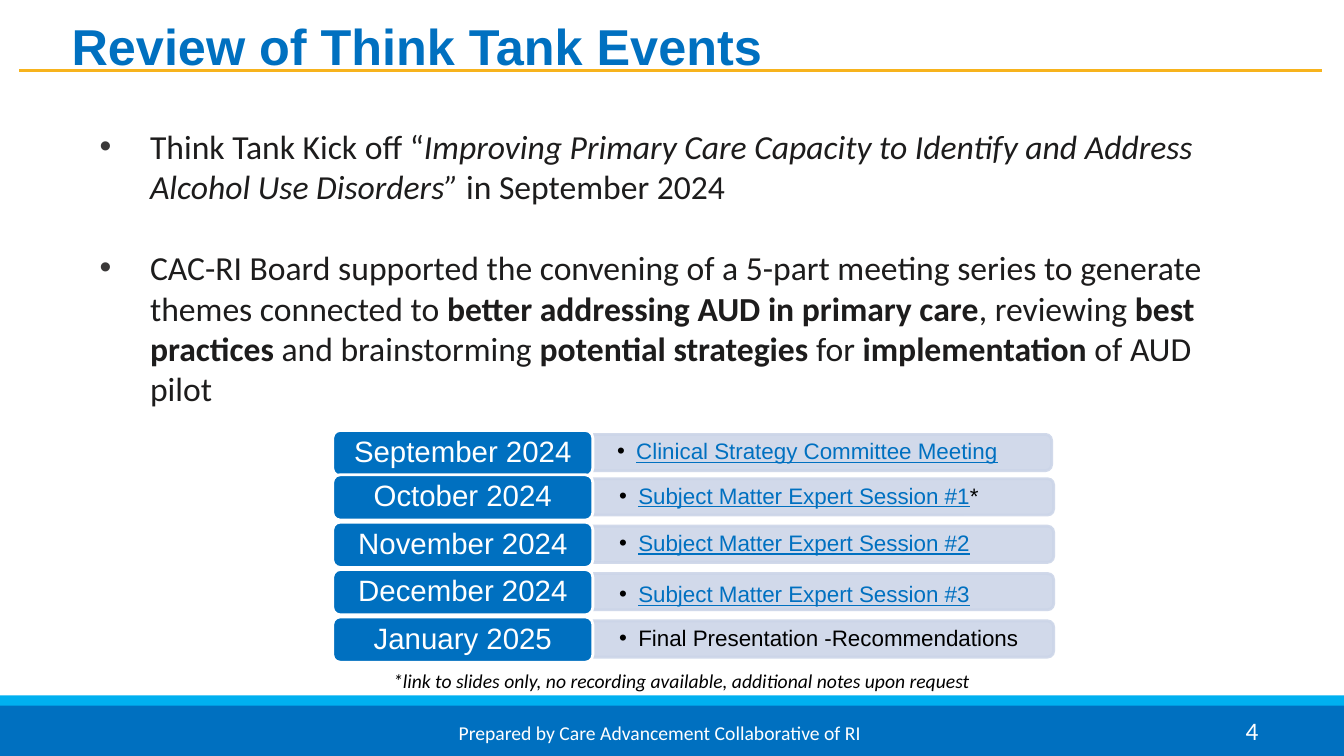
from lxml import etree
from pptx import Presentation
from pptx.dml.color import RGBColor
from pptx.enum import shapes, text
from pptx.oxml import ns
from pptx.util import Inches, Pt

COLORS = {
    "blue": "0070C0", "sky": "00B0F0", "gold": "F7B31D", "bar": "CCD5E8",
    "ink": "1D1C1C", "bullet": "3A3838", "black": "000000", "white": "FFFFFF",
}
BODY = [
    [("Think Tank Kick off “", ""),
     ("Improving Primary Care Capacity to Identify and Address Alcohol Use Disorders” ", "i"),
     ("in September 2024", "")],
    [("CAC-RI Board supported the convening of a 5-part meeting series to generate "
      "themes connected to ", ""),
     ("better addressing AUD in primary care", "b"), (", reviewing ", ""),
     ("best practices ", "b"), ("and brainstorming ", ""),
     ("potential strategies ", "b"), ("for ", ""),
     ("implementation", "b"), (" of AUD pilot", "")],
]
# month, pill top, shift of the bar to the right, shift of its text down, session runs
SESSIONS = [
    ("September 2024", 4.27, 0, 0, [("Clinical Strategy Committee Meeting", "blue", "u")]),
    ("October 2024", 4.71, 0.02, 0,
     [("Subject Matter Expert Session #1", "blue", "u"), ("*", "black", "")]),
    ("November 2024", 5.18, 0.02, 0, [("Subject Matter Expert Session #2", "blue", "u")]),
    ("December 2024", 5.65, 0.02, 0.04, [("Subject Matter Expert Session #3", "blue", "u")]),
    ("January 2025", 6.12, 0.02, 0, [("Final Presentation -Recommendations", "black", "")]),
]


def rgb(name):
    return RGBColor.from_string(COLORS[name])


def add_run(p, words, size, color, font="Calibri", style=""):
    """Add a run; style holds any of the letters b, i and u."""
    r = p.add_run()
    r.text = words
    r.font.name, r.font.size = font, Pt(size)
    r.font.color.rgb = rgb(color)
    r.font.bold, r.font.italic, r.font.underline = ("b" in style, "i" in style, "u" in style)


def add_box(s, x, y, w, h, anchor=text.MSO_ANCHOR.TOP):
    tf = s.shapes.add_textbox(Inches(x), Inches(y), Inches(w), Inches(h)).text_frame
    tf.word_wrap = True
    tf.vertical_anchor = anchor
    return tf


def add_shape(s, kind, x, y, w, h, fill, line=None, width=2):
    sp = s.shapes.add_shape(kind, Inches(x), Inches(y), Inches(w), Inches(h))
    sp.shadow.inherit = False
    sp.fill.solid()
    sp.fill.fore_color.rgb = rgb(fill)
    if line:
        sp.line.color.rgb = rgb(line)
        sp.line.width = Pt(width)
    else:
        sp.line.fill.background()
    sp.text_frame.vertical_anchor = text.MSO_ANCHOR.MIDDLE
    return sp


def set_bullet(p, indent, color):
    pPr = p._p.get_or_add_pPr()
    pPr.set("marL", str(Inches(indent)))
    pPr.set("indent", str(-Inches(indent)))
    clr = etree.SubElement(pPr, ns.qn("a:buClr"))
    etree.SubElement(clr, ns.qn("a:srgbClr"), val=COLORS[color])
    etree.SubElement(pPr, ns.qn("a:buFont"), typeface="Arial")
    etree.SubElement(pPr, ns.qn("a:buChar"), char="•")


def add_footer(s):
    rect = shapes.MSO_SHAPE.RECTANGLE
    add_shape(s, rect, 0, 6.9, 13.33, 0.6, "sky")
    add_shape(s, rect, 0, 7, 13.33, 0.5, "blue")
    credit = add_shape(s, rect, 0.89, 7.03, 11.31, 0.47, "blue", "blue", 0.75)
    p = credit.text_frame.paragraphs[0]
    p.alignment = text.PP_ALIGN.CENTER
    add_run(p, "Prepared by Care Advancement Collaborative of RI", 14, "white")
    p = add_box(s, 9.58, 7.05, 3, 0.4).paragraphs[0]
    p.alignment = text.PP_ALIGN.RIGHT
    add_run(p, "4", 18, "white")


def add_title(s, words):
    title = s.shapes.title
    title.left, title.top = Inches(0.61), Inches(0.13)
    title.width, title.height = Inches(12.53), Inches(0.64)
    tf = title.text_frame
    tf.auto_size = text.MSO_AUTO_SIZE.NONE
    tf.vertical_anchor = text.MSO_ANCHOR.MIDDLE
    p = tf.paragraphs[0]
    p.alignment = text.PP_ALIGN.LEFT
    add_run(p, words, 36, "blue", "Arial", "b")
    rule = s.shapes.add_connector(shapes.MSO_CONNECTOR.STRAIGHT, Inches(0.19),
                                  Inches(0.7), Inches(13.11), Inches(0.7))
    rule.line.color.rgb = rgb("gold")
    rule.line.width = Pt(2)
    etree.SubElement(rule._element.spPr, ns.qn("a:effectLst"))


def add_body(s):
    tf = add_box(s, 0.89, 1.2, 11.66, 3)
    for i, runs in enumerate(BODY):
        p = tf.add_paragraph() if i else tf.paragraphs[0]
        if i:
            p.space_before = Pt(29)
        set_bullet(p, 0.5, "bullet")
        for words, style in runs:
            add_run(p, words, 24, "ink", style=style)


def add_session(s, month, top, shift, drop, runs):
    """Add a month pill and the bar that names its session."""
    bar_w, bar_h = 4.58, 0.36
    left, middle = 5.85 + shift, top + 0.22
    bar = add_shape(s, shapes.MSO_SHAPE.ROUND_2_SAME_RECTANGLE,
                    left + (bar_w - bar_h) / 2, middle - bar_w / 2,
                    bar_h, bar_w, "bar", "bar")
    bar.rotation = 90
    for clr in bar._element.spPr.iter(ns.qn("a:srgbClr")):
        etree.SubElement(clr, ns.qn("a:alpha"), val="90000")

    tf = add_box(s, left, middle - bar_h / 2 + drop, bar_w, bar_h, text.MSO_ANCHOR.MIDDLE)
    tf.margin_left = tf.margin_right = Inches(0.27)
    tf.margin_top = tf.margin_bottom = 0
    p = tf.paragraphs[0]
    p.line_spacing = 0.9
    set_bullet(p, 0.19, "black")
    for words, color, style in runs:
        add_run(p, words, 16, color, "Arial", style)

    pill = add_shape(s, shapes.MSO_SHAPE.ROUNDED_RECTANGLE, 3.3, top, 2.58, 0.45,
                     "blue", "white")
    tf = pill.text_frame
    tf.margin_top = tf.margin_bottom = Inches(0.04)
    p = tf.paragraphs[0]
    p.alignment = text.PP_ALIGN.CENTER
    p.line_spacing = 0.9
    add_run(p, month, 21, "white", "Arial")


def main():
    prs = Presentation()
    prs.slide_width, prs.slide_height = Inches(13.33), Inches(7.5)
    s = prs.slides.add_slide(prs.slide_layouts[5])
    add_footer(s)
    add_title(s, "Review of Think Tank Events")
    add_body(s)
    for session in SESSIONS:
        add_session(s, *session)
    note = add_box(s, 3.8, 6.59, 6.14, 0.34)
    add_run(note.paragraphs[0], "*link to slides only, no recording available, "
            "additional notes upon request", 14, "black", style="i")
    prs.save("out.pptx")


if __name__ == "__main__":
    main()
